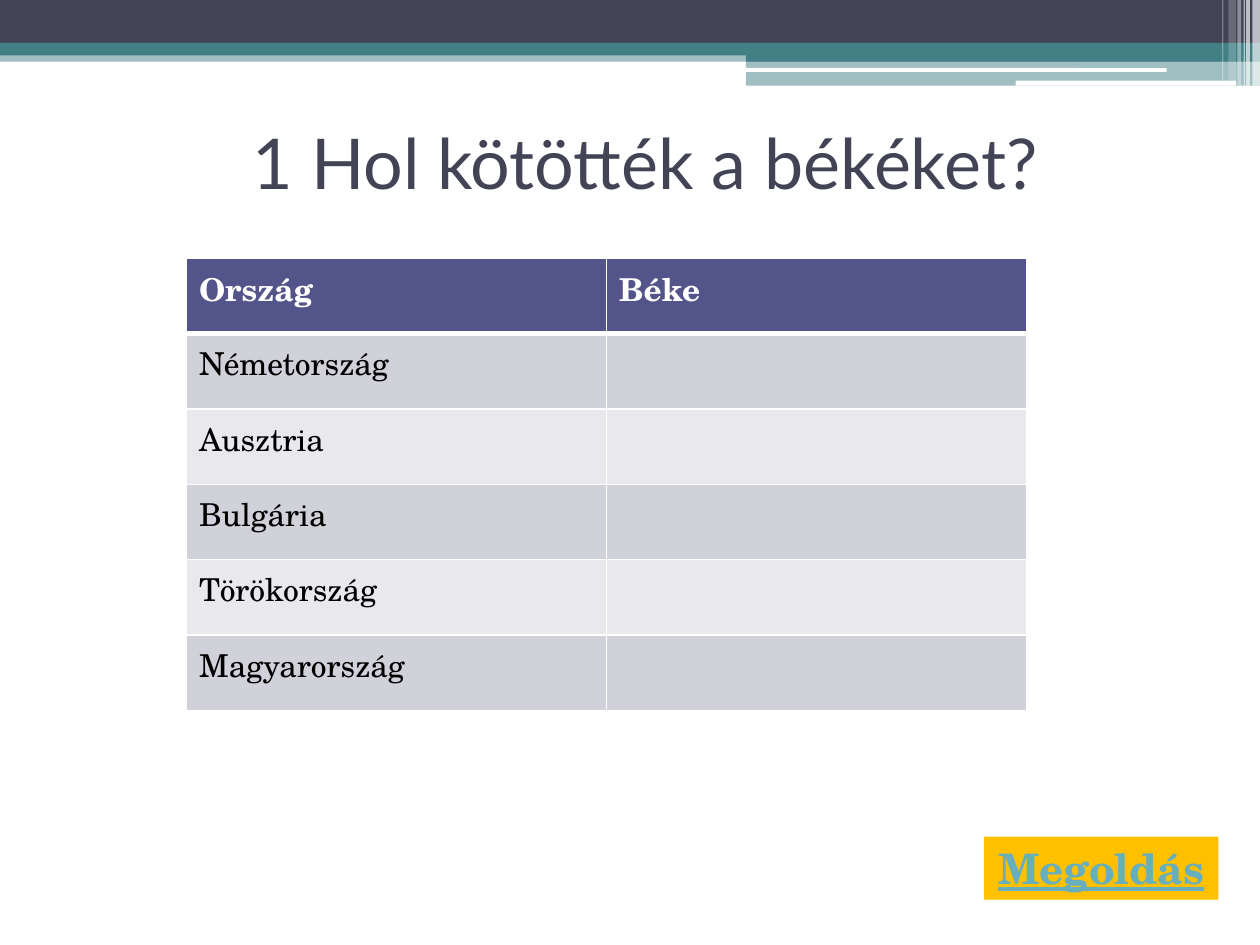
from lxml.etree import SubElement
from pptx import Presentation
from pptx.dml.color import RGBColor
from pptx.enum.shapes import MSO_SHAPE as Shape
from pptx.enum.text import MSO_ANCHOR as Anchor, PP_ALIGN as Align
from pptx.oxml.ns import qn
from pptx.util import Inches, Pt

WIDTH, HEIGHT = 10, 7.5
SANS, SERIF = "Lato", "TeX Gyre Schola"
DARK, TEAL, WHITE, BLACK = "424456", "438086", "FFFFFF", "000000"
HEADER, BANDS = "53548A", ("D1D1DA", "E9E9ED")

TITLE = "1 Hol kötötték a békéket?"
BUTTON = "Megoldás"
ROWS = [
    ("Ország", "Béke"),
    ("Németország", ""),
    ("Ausztria", ""),
    ("Bulgária", ""),
    ("Törökország", ""),
    ("Magyarország", ""),
]
BANNER = [
    (0, 0.4, WIDTH, 0.09, TEAL, 50),
    (0, 0, WIDTH, 0.34, DARK, 100),
    (0, 0.34, WIDTH, 0.1, TEAL, 100),
    (5.92, 0.39, 4.08, 0.1, TEAL, 100),
    (5.92, 0.48, 4.08, 0.2, TEAL, 50),
]
ROUNDED_LINES = [(5.91, 0.54, 3.35, 0.03), (8.06, 0.64, 1.75, 0.04)]
STRIPES = [
    (9.94, 0.06, 0.68, 65),
    (9.89, 0.03, 0.68, 65),
    (9.87, 0.01, 0.68, 60),
    (9.82, 0.03, 0.68, 40),
    (9.75, 0.06, 0.64, 20),
    (9.7, 0.01, 0.64, 30),
]
TABLE_BOX = (1.48, 2.05, 6.67, 3.59)


def color(value):
    return RGBColor.from_string(value)


def inches(*lengths):
    return [Inches(length) for length in lengths]


def add_block(slide, box, fill, opacity=100, kind=Shape.RECTANGLE):
    shape = slide.shapes.add_shape(kind, *inches(*box))
    shape.shadow.inherit = False
    shape.line.fill.background()
    shape.fill.solid()
    shape.fill.fore_color.rgb = color(fill)
    if opacity < 100:
        tone = shape.fill._xPr.find(qn("a:solidFill"))[0]
        SubElement(tone, qn("a:alpha"), val=str(opacity * 1000))
    return shape


def write(frame, text, size=18, font=SERIF, fill=BLACK, bold=False,
          underline=False, align=Align.LEFT):
    paragraph = frame.paragraphs[0]
    paragraph.alignment = align
    if not text:
        paragraph.font.size = Pt(size)
        return
    run = paragraph.add_run()
    run.text = text
    run.font.size, run.font.name = Pt(size), font
    run.font.bold, run.font.underline = bold, underline
    run.font.color.rgb = color(fill)


def set_borders(cell, **widths):
    properties = cell._tc.get_or_add_tcPr()
    for side in "LRTB":
        line = SubElement(properties, qn("a:ln" + side), w=str(Pt(widths.get(side, 1))))
        SubElement(SubElement(line, qn("a:solidFill")), qn("a:srgbClr"), val=WHITE)


def add_banner(slide):
    for *box, fill, opacity in BANNER:
        add_block(slide, box, fill, opacity)
    for box in ROUNDED_LINES:
        add_block(slide, box, WHITE, kind=Shape.ROUNDED_RECTANGLE)
    for left, width, height, opacity in STRIPES:
        add_block(slide, (left, 0, width, height), WHITE, opacity)


def add_title(slide):
    frame = slide.shapes.add_textbox(*inches(0.62, 0.7, 9, 1.17)).text_frame
    frame.word_wrap = True
    frame.vertical_anchor = Anchor.MIDDLE
    write(frame, TITLE, size=40, font=SANS, fill=DARK, align=Align.CENTER)


def add_button(slide):
    frame = add_block(slide, (7.81, 6.64, 1.86, 0.5), "FFC000").text_frame
    frame.word_wrap = False
    frame.vertical_anchor = Anchor.TOP
    write(frame, BUTTON, size=24, fill="67AFBD", bold=True, underline=True,
          align=Align.CENTER)


def add_peace_table(slide):
    table = slide.shapes.add_table(len(ROWS), len(ROWS[0]), *inches(*TABLE_BOX)).table
    for row, texts in enumerate(ROWS):
        heading = row == 0
        background = HEADER if heading else BANDS[(row - 1) % 2]
        for column, text in enumerate(texts):
            cell = table.cell(row, column)
            set_borders(cell, T=3 if row == 1 else 1, B=3 if heading else 1)
            cell.fill.solid()
            cell.fill.fore_color.rgb = color(background)
            write(cell.text_frame, text, fill=WHITE if heading else BLACK, bold=heading)


def main():
    presentation = Presentation()
    presentation.slide_width, presentation.slide_height = inches(WIDTH, HEIGHT)
    slide = presentation.slides.add_slide(presentation.slide_layouts[6])
    add_banner(slide)
    add_title(slide)
    add_button(slide)
    add_peace_table(slide)
    presentation.save("out.pptx")


if __name__ == "__main__":
    main()
